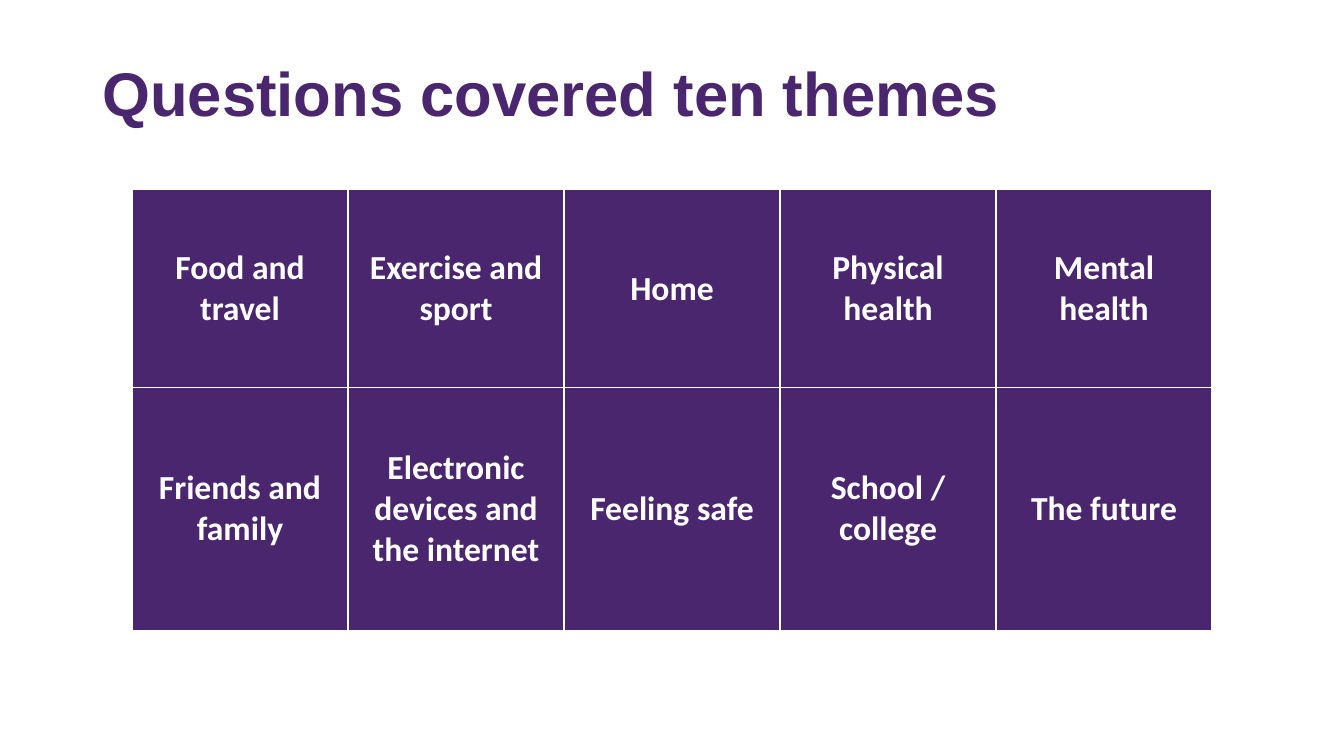
from dataclasses import dataclass

from lxml.etree import SubElement
from pptx import Presentation
from pptx.dml.color import RGBColor
from pptx.enum.text import MSO_ANCHOR as Anchor, PP_ALIGN as Align
from pptx.oxml.ns import qn
from pptx.slide import Slide
from pptx.table import _Cell as Cell
from pptx.text.text import _Paragraph as Paragraph
from pptx.util import Pt

COLORS = {"purple": "4A266E", "white": "FFFFFF"}
TABLE_LEFT, TABLE_TOP = 94.3, 135.5
COLUMN_WIDTH = 154.3
BORDER_WIDTH = 1


@dataclass(frozen=True)
class ThemeRow:
    height: float
    themes: tuple[str, ...]


THEME_ROWS = (
    ThemeRow(141.5, ("Food and travel", "Exercise and sport", "Home",
                     "Physical health", "Mental health")),
    ThemeRow(173.2, ("Friends and family", "Electronic devices and the internet",
                     "Feeling safe", "School / college", "The future")),
)


def add_bold_run(paragraph: Paragraph, text: str, font_name: str, size: float,
                 color: str) -> None:
    run = paragraph.add_run()
    run.text = text
    run.font.name = font_name
    run.font.size = Pt(size)
    run.font.bold = True
    run.font.color.rgb = RGBColor.from_string(COLORS[color])


def add_title(slide: Slide, text: str) -> None:
    title = slide.shapes.title
    title.left, title.top, title.width, title.height = Pt(66), Pt(16.6), Pt(828), Pt(104.4)
    title.text_frame.word_wrap = True
    title.text_frame.vertical_anchor = Anchor.MIDDLE
    heading = title.text_frame.paragraphs[0]
    heading.alignment = Align.LEFT
    heading.line_spacing = 0.9
    add_bold_run(heading, text, "Arial", 44, "purple")


def add_borders(cell: Cell) -> None:
    """Outline all four sides; call before setting the fill, which must follow in the XML."""
    properties = cell._tc.get_or_add_tcPr()
    for side in ("a:lnL", "a:lnR", "a:lnT", "a:lnB"):
        border = SubElement(properties, qn(side), w=str(Pt(BORDER_WIDTH)))
        SubElement(SubElement(border, qn("a:solidFill")), qn("a:srgbClr"), val=COLORS["white"])


def format_theme_cell(cell: Cell, theme: str) -> None:
    add_borders(cell)
    cell.fill.solid()
    cell.fill.fore_color.rgb = RGBColor.from_string(COLORS["purple"])
    cell.vertical_anchor = Anchor.MIDDLE
    label = cell.text_frame.paragraphs[0]
    label.alignment = Align.CENTER
    add_bold_run(label, theme, "Calibri", 24, "white")


def add_theme_table(slide: Slide, theme_rows: tuple[ThemeRow, ...]) -> None:
    column_count = len(theme_rows[0].themes)
    theme_table = slide.shapes.add_table(
        len(theme_rows), column_count, Pt(TABLE_LEFT), Pt(TABLE_TOP),
        Pt(COLUMN_WIDTH * column_count), Pt(sum(row.height for row in theme_rows))).table
    theme_table.first_row = False
    theme_table.horz_banding = False
    for column in theme_table.columns:
        column.width = Pt(COLUMN_WIDTH)
    for table_row, theme_row in zip(theme_table.rows, theme_rows):
        table_row.height = Pt(theme_row.height)
        for cell, theme in zip(table_row.cells, theme_row.themes):
            format_theme_cell(cell, theme)


def main() -> None:
    deck = Presentation()
    deck.slide_width, deck.slide_height = Pt(960), Pt(540)
    slide = deck.slides.add_slide(deck.slide_layouts.get_by_name("Title Only"))
    add_title(slide, "Questions covered ten themes")
    add_theme_table(slide, THEME_ROWS)
    deck.save("out.pptx")


if __name__ == "__main__":
    main()
